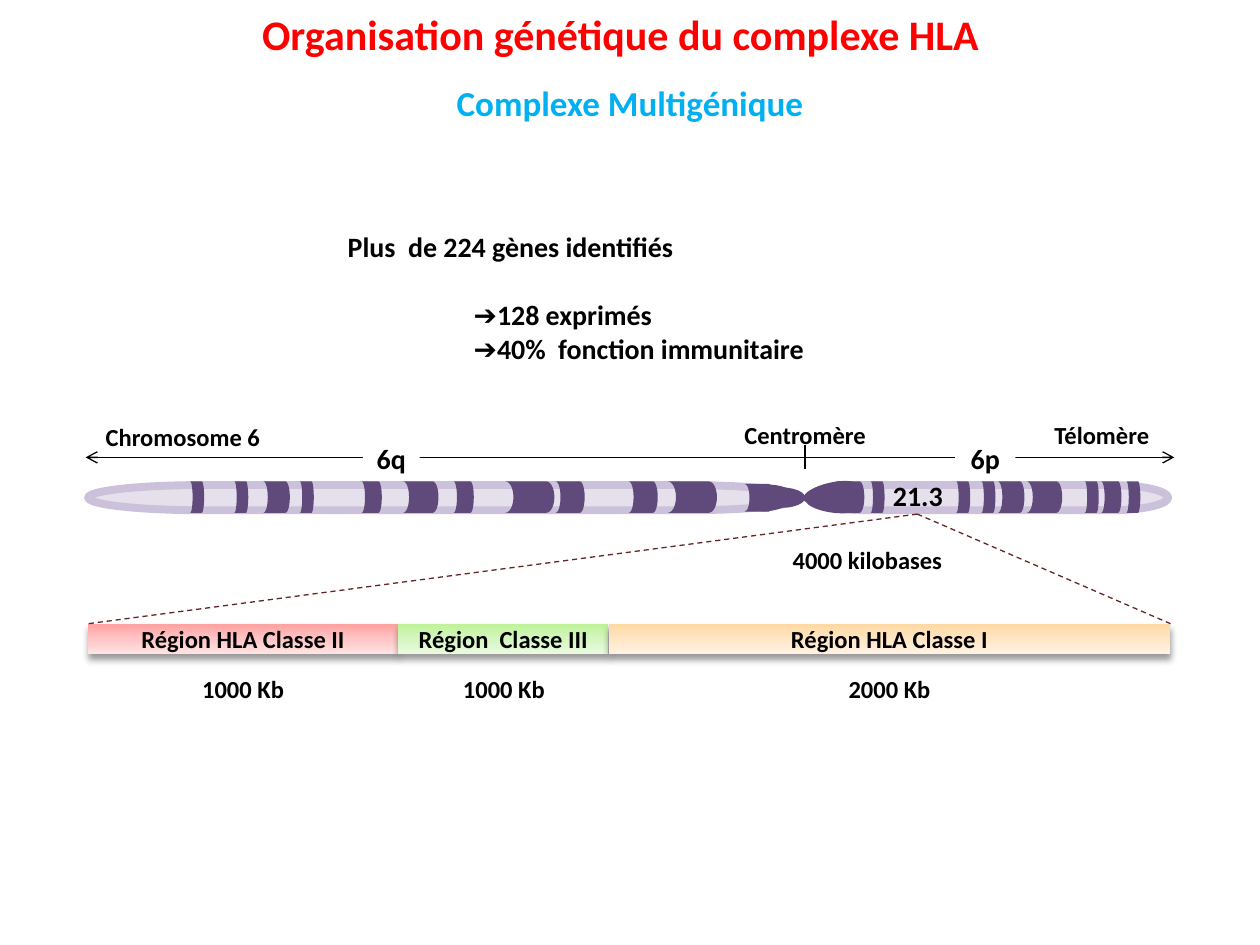
from copy import deepcopy
from itertools import pairwise

from pptx import Presentation
from pptx.dml.color import RGBColor
from pptx.enum.dml import MSO_LINE as Dash
from pptx.enum.shapes import MSO_CONNECTOR as Link, MSO_SHAPE as Kind
from pptx.enum.text import MSO_ANCHOR as Anchor, MSO_AUTO_SIZE as Fit, PP_ALIGN as Align
from pptx.oxml.ns import qn
from pptx.util import Inches, Pt

WIDE, HIGH = Inches(10), Inches(7.5)
COL, ROW = WIDE / 100, HIGH / 75
FONT = "Calibri"
BLACK, WHITE, PLUM = "000000", "FFFFFF", "604A7B"
ARM, BAND, BAR, SIZE = 36.3, (38.2, 2.5), (49.5, 2.4), (53, 3.3)
Q_BANDS = [(15.1, 1.1), (18.6, 1.1), (20.9, 2.1), (23.8, 1.1), (28.7, 1.6),
           (32, 2.8), (36, 1.6), (40.1, 3.9), (44.1, 2.3), (49.9, 2.3), (53, 3.9)]
P_BANDS = [(66.3, 2.3), (69.1, 1.1), (75.9, 1.1), (77.9, 1.1), (79.2, 2.1),
           (81.5, 2.8), (86.1, 1.1), (87.4, 1.6), (89.4, 1.1)]
TIPS = [(60.2, 38.7, 3.7, 0), (59.6, 38.5, 3.7, 8.5), (59.5, 38.9, 3.7, 346.1),
        (64, 38.6, 3.7, 0), (63.7, 38.3, 4.6, 347.2), (63.9, 39.1, 4.6, 6.9)]
EDGES = [7, 31.6, 48.3, 92.9]
ZONES = [("Région HLA Classe II", ["FFA0A0", "FFC5C5", "FFE3E3"]),
         ("Région  Classe III", ["BEF297", "D5F6C0", "EAFAE0"]),
         ("Région HLA Classe I", ["FFD8A0", "FFE6C5", "FFF2E3"])]


def tint(code):
    return RGBColor.from_string(code)


def grid(x, y, w, h):
    return [round(n) for n in (x * COL, y * ROW, w * COL, h * ROW)]


def fmt(item, **vals):
    for key, val in vals.items():
        setattr(item, key, val)


def write(item, lines, size, color=BLACK, align=Align.CENTER):
    frame = item.text_frame
    fmt(frame, text="\n".join(lines), word_wrap=True, auto_size=Fit.NONE,
        vertical_anchor=Anchor.MIDDLE)
    for para in frame.paragraphs:
        fmt(para, alignment=align, space_before=Pt(0))
        fmt(para.runs[0].font, name=FONT, size=Pt(size), bold=True)
        para.runs[0].font.color.rgb = tint(color)


def label(slide, text, spot, size=14, color=BLACK, align=Align.CENTER):
    item = slide.shapes.add_textbox(*grid(*spot))
    write(item, [text], size, color, align)
    return item


def shape(slide, kind, spot, fill=None, edge=None, turn=0):
    item = slide.shapes.add_shape(kind, *grid(*spot))
    item.shadow.inherit = False
    item.rotation = turn
    if fill:
        item.fill.solid()
        item.fill.fore_color.rgb = tint(fill)
    if edge:
        item.line.color.rgb = tint(edge)
        item.line.width = Pt(4.5)
    else:
        item.line.fill.background()
    return item


def line(slide, start, end, color=BLACK, dash=None, arrow=None):
    x, y, w, h = grid(*start, *end)
    item = slide.shapes.add_connector(Link.STRAIGHT, x, y, w, h)
    fmt(item.line, width=Pt(0.75), dash_style=dash)
    item.line.color.rgb = tint(color)
    if arrow:
        mark = item.line._ln.makeelement(qn("a:" + arrow), {"type": "arrow"})
        item.line._ln.append(mark)
    props = item._element.spPr
    props.append(props.makeelement(qn("a:effectLst"), {}))


def blend(item, codes):
    item.fill.gradient()
    item.fill.gradient_angle = 270
    stops = item._element.spPr.find(qn("a:gradFill")).find(qn("a:gsLst"))
    stops.insert(1, deepcopy(stops[0]))
    for i, (stop, code) in enumerate(zip(item.fill.gradient_stops, codes)):
        stop.position = i / 2
        stop.color.rgb = tint(code)


def shade(item):
    effects = item._element.spPr.find(qn("a:effectLst"))
    cast = effects.makeelement(qn("a:outerShdw"), {
        "blurRad": str(Pt(4)), "dist": str(Pt(3)), "dir": "5400000", "rotWithShape": "0"})
    ink = cast.makeelement(qn("a:srgbClr"), {"val": BLACK})
    ink.append(ink.makeelement(qn("a:alpha"), {"val": "40000"}))
    cast.append(ink)
    effects.append(cast)


def place(item, spot):
    keys = ("left", "top", "width", "height")
    fmt(item, **dict(zip(keys, grid(*spot))))


def heads(slide):
    title, body = slide.placeholders
    place(title, (1.6, 0, 95.3, 5.4))
    write(title, ["Organisation génétique du complexe HLA"], 24, "FF0000")
    label(slide, "Complexe Multigénique", (28.1, 5.9, 43.8, 4.4), 20, "00B0F0")
    place(body, (26.6, 17.7, 46.9, 11.8))
    facts = ["Plus  de 224 gènes identifiés", "➔128 exprimés", "➔40%  fonction immunitaire"]
    write(body, facts, 16, align=Align.LEFT)
    paras = body.text_frame.paragraphs
    paras[1].space_before = Pt(19.5)
    for i, para in enumerate(paras):
        props = para._p.get_or_add_pPr()
        props.set("marL", str(Inches(1) if i else 0))
        props.set("indent", "0")
        props.append(props.makeelement(qn("a:buNone"), {}))


def arms(slide):
    line(slide, (6.8, ARM), (63.9, ARM), arrow="headEnd")
    line(slide, (63.9, ARM), (93.2, ARM), arrow="tailEnd")
    line(slide, (63.9, 35.3), (63.9, 37.2))
    for text, x, w in (("6q", 28.8, 4.5), ("6p", 75.8, 4.8)):
        write(shape(slide, Kind.RECTANGLE, (x, 34.5, w, 3.7), WHITE), [text], 16)
    label(slide, "Chromosome 6", (7.4, 33, 21.5, 3.3), align=Align.LEFT)
    label(slide, "Centromère", (56.5, 32.8, 14.8, 3.4))
    label(slide, "Télomère", (77.8, 32.8, 14.4, 3.4), align=Align.RIGHT)


def bands(slide):
    for x, w in ((7, 56.6), (64.3, 28.4)):
        shape(slide, Kind.FLOWCHART_TERMINATOR, (x, 38.5, w, 2), "E6E0EC", "CCC1DA")
    for x, y, w, turn in TIPS:
        shape(slide, Kind.OVAL, (x, y, w, 1.6), PLUM, turn=turn)
    spots = [(x, BAND[0], w, BAND[1]) for x, w in Q_BANDS + P_BANDS]
    for spot in spots + [(59.1, 38.4, 2.3, 2.2)]:
        shape(slide, Kind.FLOWCHART_STORED_DATA, spot, PLUM, turn=180)
    label(slide, "21.3", (69.7, 37.5, 6.3, 3.7), 16)


def zones(slide):
    for (left, right), (text, codes) in zip(pairwise(EDGES), ZONES):
        item = shape(slide, Kind.RECTANGLE, (left, BAR[0], right - left, BAR[1]))
        blend(item, codes)
        shade(item)
        write(item, [text], 14)
    for x in (EDGES[0], EDGES[-1]):
        line(slide, (72.8, 40.8), (x, BAR[0]), "632523", Dash.DASH)
    for text, mid in (("1000 Kb", 19.3), ("1000 Kb", 40), ("2000 Kb", 70.6)):
        label(slide, text, (mid - 6, SIZE[0], 12, SIZE[1]))
    label(slide, "4000 kilobases", (61, 42.7, 15.7, 3.4))


def main():
    deck = Presentation()
    fmt(deck, slide_width=WIDE, slide_height=HIGH)
    slide = deck.slides.add_slide(deck.slide_layouts[1])
    for draw in (heads, arms, bands, zones):
        draw(slide)
    deck.save("out.pptx")


if __name__ == "__main__":
    main()
